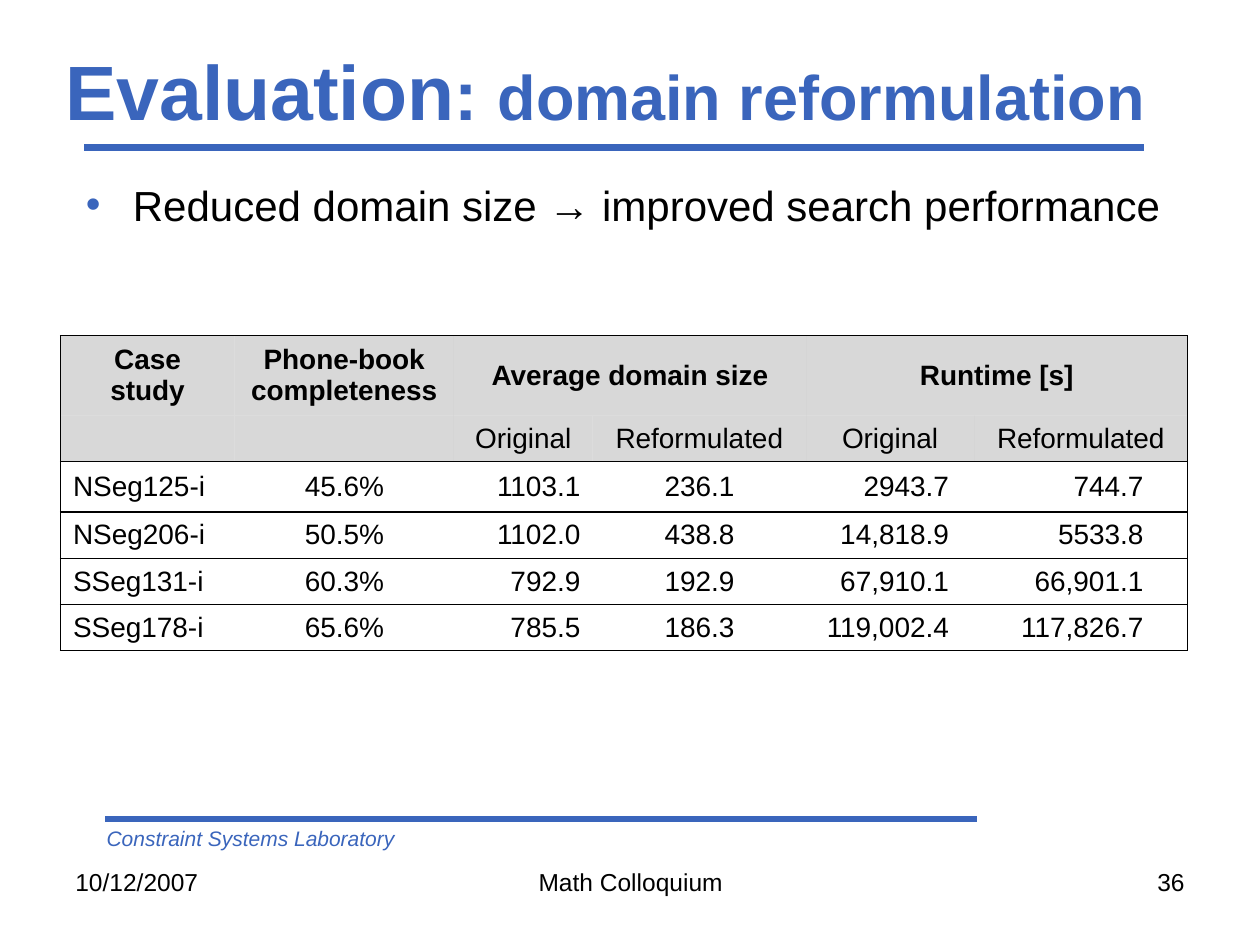
"""Build a slide that compares domain size and runtime before and after reformulation."""
from dataclasses import dataclass

from lxml import etree
from pptx import Presentation
from pptx.dml.color import RGBColor
from pptx.enum.shapes import MSO_CONNECTOR
from pptx.enum.text import MSO_ANCHOR, MSO_AUTO_SIZE, PP_ALIGN
from pptx.oxml.ns import qn
from pptx.util import Cm, Pt

LEFT, CENTER, RIGHT = PP_ALIGN.LEFT, PP_ALIGN.CENTER, PP_ALIGN.RIGHT
MIDDLE = MSO_ANCHOR.MIDDLE
NO_FIT = MSO_AUTO_SIZE.NONE
STRAIGHT = MSO_CONNECTOR.STRAIGHT


@dataclass(frozen=True)
class Theme:
    font: str = "Arial"
    accent: str = "3A65BC"
    ink: str = "000000"
    header: str = "B2B2B2"
    header_alpha: int = 50000
    title: int = 44
    colon: int = 40
    subtitle: int = 36
    body: int = 24
    table: int = 16
    footer: int = 14
    lab: int = 12
    rule: float = 4
    border: float = 0.75


@dataclass(frozen=True)
class Column:
    width: float
    align: PP_ALIGN
    margin_right: float = 0.25


@dataclass(frozen=True)
class Label:
    text: str
    left: float
    top: float
    width: float
    height: float
    size: int
    align: PP_ALIGN = LEFT
    color: str = Theme.ink
    italic: bool = False


@dataclass(frozen=True)
class Rule:
    left: float
    right: float
    y: float


THEME = Theme()
RULES = [Rule(1.7, 23.06, 2.97), Rule(2.12, 19.69, 16.51)]
LABELS = [
    Label("Constraint Systems Laboratory", 1.9, 16.51, 13.34, 0.76, THEME.lab,
          color=THEME.accent, italic=True),
    Label("10/12/2007", 1.27, 17.35, 5.92, 1.32, THEME.footer),
    Label("Math Colloquium", 8.69, 17.35, 8.05, 1.32, THEME.footer, CENTER),
    Label("36", 18.21, 17.35, 5.92, 1.32, THEME.footer, RIGHT),
]
COLUMNS = [
    Column(3.51, LEFT), Column(4.42, CENTER), Column(2.8, RIGHT),
    Column(4.3, CENTER), Column(3.39, RIGHT, 0.51), Column(4.3, RIGHT, 0.89),
]
ROW_HEIGHTS = [1.51, 0.88, 1.01, 0.89, 0.89, 0.89]
HEADER_ROWS = 2
ROWS = [
    ["Case study", "Phone-book\ncompleteness", "Average domain size", "", "Runtime [s]", ""],
    ["", "", "Original", "Reformulated", "Original", "Reformulated"],
    ["NSeg125-i", "45.6%", "1103.1", "236.1", "2943.7", "744.7"],
    ["NSeg206-i", "50.5%", "1102.0", "438.8", "14,818.9", "5533.8"],
    ["SSeg131-i", "60.3%", "792.9", "192.9", "67,910.1", "66,901.1"],
    ["SSeg178-i", "65.6%", "785.5", "186.3", "119,002.4", "117,826.7"],
]


def add_run(p, text: str, *, size: float, color: str = THEME.ink,
            bold: bool = False, italic: bool = False) -> None:
    """Append a formatted run to a paragraph."""
    r = p.add_run()
    r.text = text
    r.font.name, r.font.size = THEME.font, Pt(size)
    r.font.bold, r.font.italic = bold, italic
    r.font.color.rgb = RGBColor.from_string(color)


def add_box(s, left: float, top: float, width: float, height: float):
    """Add a wrapping text box and return its first paragraph."""
    tf = s.shapes.add_textbox(Cm(left), Cm(top), Cm(width), Cm(height)).text_frame
    tf.word_wrap = True
    return tf.paragraphs[0]


def add_label(s, label: Label) -> None:
    """Add a one-line label."""
    p = add_box(s, label.left, label.top, label.width, label.height)
    p.alignment = label.align
    add_run(p, label.text, size=label.size, color=label.color, italic=label.italic)


def add_rule(s, rule: Rule) -> None:
    """Add a thick horizontal rule."""
    line = s.shapes.add_connector(STRAIGHT, Cm(rule.left), Cm(rule.y), Cm(rule.right), Cm(rule.y))
    line.line.color.rgb = RGBColor.from_string(THEME.accent)
    line.line.width = Pt(THEME.rule)
    etree.SubElement(line._element.spPr, qn("a:effectLst"))


def add_title(s) -> None:
    """Place the title placeholder and fill it with runs of falling size."""
    sp = s.shapes.title
    sp.left, sp.top, sp.width, sp.height = Cm(1.06), Cm(0.85), Cm(22.86), Cm(1.9)
    tf = sp.text_frame
    tf.auto_size, tf.vertical_anchor, tf.word_wrap = NO_FIT, MIDDLE, True
    p = tf.paragraphs[0]
    p.alignment = LEFT
    parts = [("Evaluation", THEME.title), (": ", THEME.colon),
             ("domain reformulation", THEME.subtitle)]
    for text, size in parts:
        add_run(p, text, size=size, color=THEME.accent, bold=True)


def add_bullet(s, text: str) -> None:
    """Add the bulleted statement under the title."""
    p = add_box(s, 1.48, 3.49, 22.65, 1.59)
    pPr = p._p.get_or_add_pPr()
    pPr.set("marL", str(Cm(0.95)))
    pPr.set("indent", str(Cm(-0.95)))
    color = etree.SubElement(pPr, qn("a:buClr"))
    etree.SubElement(color, qn("a:srgbClr"), val=THEME.accent)
    etree.SubElement(pPr, qn("a:buFont"), typeface=THEME.font)
    etree.SubElement(pPr, qn("a:buChar"), char="•")
    add_run(p, text, size=THEME.body)


def set_borders(cell, visible: set[str]) -> None:
    """Draw the named sides of a cell and clear the others."""
    tcPr = cell._tc.get_or_add_tcPr()
    for i, side in enumerate("LRTB"):
        ln = etree.Element(qn(f"a:ln{side}"), w=str(Pt(THEME.border)))
        if side in visible:
            fill = etree.SubElement(ln, qn("a:solidFill"))
            etree.SubElement(fill, qn("a:srgbClr"), val=THEME.ink)
        else:
            etree.SubElement(ln, qn("a:noFill"))
        tcPr.insert(i, ln)


def fill_cell(cell, row: int, col: int, text: str) -> None:
    """Write and format one table cell."""
    column, header = COLUMNS[col], row < HEADER_ROWS
    cell.vertical_anchor = MIDDLE
    if header:
        cell.fill.solid()
        cell.fill.fore_color.rgb = RGBColor.from_string(THEME.header)
        clr = cell._tc.tcPr.find(".//" + qn("a:srgbClr"))
        etree.SubElement(clr, qn("a:alpha"), val=str(THEME.header_alpha))
    else:
        cell.fill.background()
        cell.margin_right = Cm(column.margin_right)
    if not text:
        cell.margin_top = cell.margin_bottom = 0
    tf = cell.text_frame
    for i, line in enumerate(text.split("\n") if text else []):
        p = tf.add_paragraph() if i else tf.paragraphs[0]
        p.alignment = CENTER if header else column.align
        add_run(p, line, size=THEME.table, bold=row == 0)
    sides = {"L": col == 0, "R": col == len(COLUMNS) - 1 or cell.is_merge_origin,
             "T": row != 1, "B": row != 0}
    if cell.is_merge_origin:
        sides["R"] = col + cell.span_width == len(COLUMNS)
    set_borders(cell, {side for side, shown in sides.items() if shown})


def add_results(s) -> None:
    """Add the table of case studies."""
    width = sum(column.width for column in COLUMNS)
    frame = s.shapes.add_table(len(ROWS), len(COLUMNS), Cm(1.22), Cm(6.77),
                               Cm(width), Cm(sum(ROW_HEIGHTS)))
    table = frame.table
    table.first_row = table.horz_banding = False
    for col, column in enumerate(COLUMNS):
        table.columns[col].width = Cm(column.width)
    for col in (2, 4):
        table.cell(0, col).merge(table.cell(0, col + 1))
    for row, texts in enumerate(ROWS):
        table.rows[row].height = Cm(ROW_HEIGHTS[row])
        for col, text in enumerate(texts):
            fill_cell(table.cell(row, col), row, col, text)


def main() -> None:
    """Build and save the slide."""
    prs = Presentation()
    prs.slide_width, prs.slide_height = Cm(25.4), Cm(19.05)
    s = prs.slides.add_slide(prs.slide_layouts[5])
    for rule in RULES:
        add_rule(s, rule)
    add_title(s)
    add_bullet(s, "Reduced domain size → improved search performance")
    add_results(s)
    for label in LABELS:
        add_label(s, label)
    prs.save("out.pptx")


if __name__ == "__main__":
    main()
